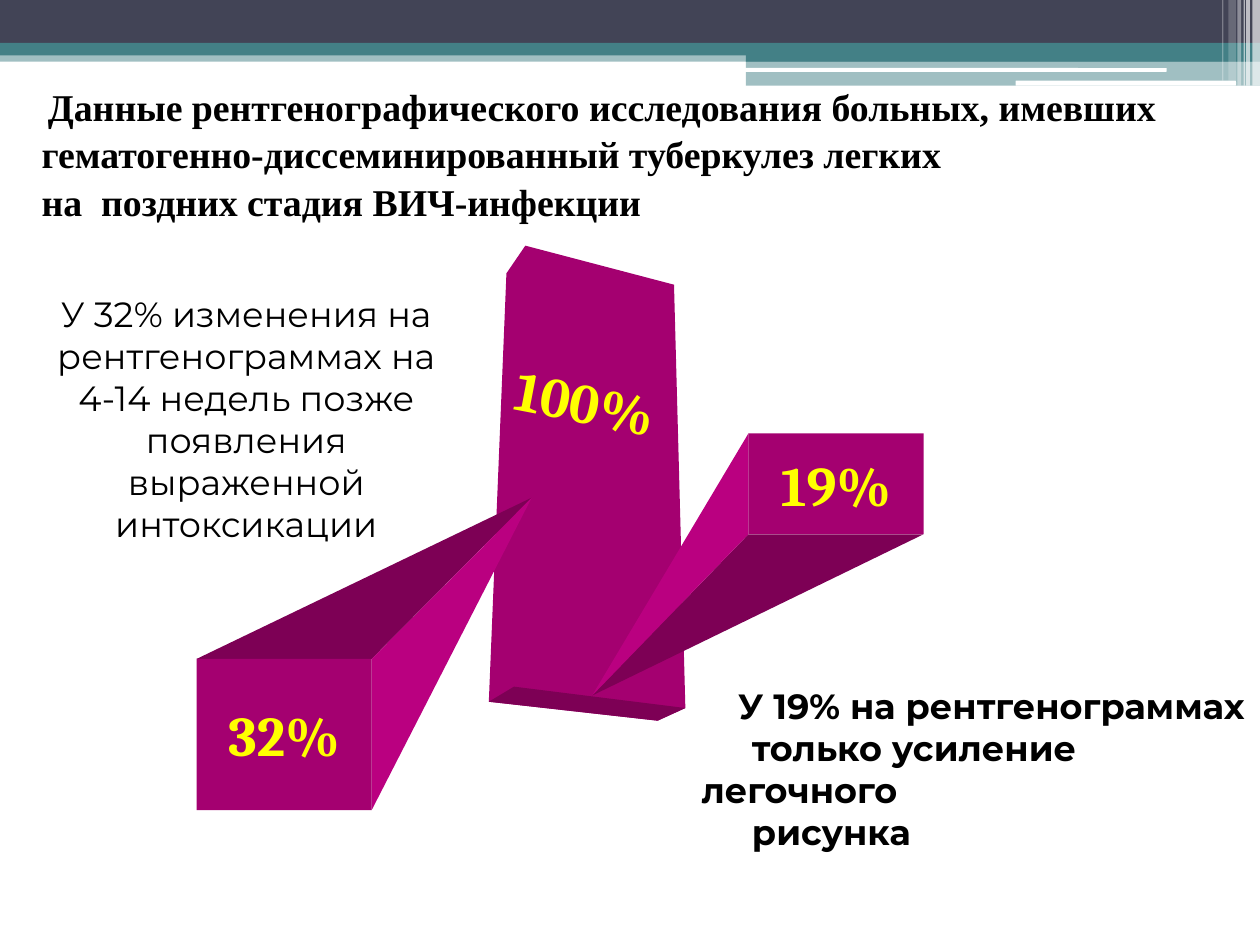
from lxml import etree
from pptx import Presentation
from pptx.dml.color import RGBColor
from pptx.enum.shapes import MSO_SHAPE
from pptx.enum.text import MSO_ANCHOR, PP_ALIGN
from pptx.oxml.ns import qn
from pptx.util import Inches, Pt

RECTANGLE, ROUNDED = MSO_SHAPE.RECTANGLE, MSO_SHAPE.ROUNDED_RECTANGLE
TOP, MIDDLE = MSO_ANCHOR.TOP, MSO_ANCHOR.MIDDLE
LEFT, CENTER = PP_ALIGN.LEFT, PP_ALIGN.CENTER
TITLE_ONLY = 5

# The slide is a grid of 100 columns by 75 rows of square cells.
COLUMNS, ROWS = 100, 75
CELL = Inches(0.1)

NAVY, TEAL, WHITE, BLACK, YELLOW = "424456", "438086", "FFFFFF", "000000", "FFFF00"
FRONT, LIGHT, DARK = "A40070", "BA0080", "7D0055"

TITLE_FORMAT = {"name": "Times New Roman", "size": Pt(21.6), "bold": True}
LABEL_FORMAT = {"name": "Cambria", "size": Pt(32), "bold": True}
NOTE_FORMAT = {"name": "Montserrat", "size": Pt(20), "bold": False}
STRONG_NOTE_FORMAT = {**NOTE_FORMAT, "bold": True}

TITLE = ("Данные рентгенографического исследования больных, имевших "
         "гематогенно-диссеминированный туберкулез легких\v"
         "на  поздних стадия ВИЧ-инфекции")
LATE_CHANGES = ["У 32% изменения на", "рентгенограммах на", "4-14 недель позже",
                "появления", "выраженной", "интоксикации"]
PATTERN_ONLY = ["У 19% на рентгенограммах", "только усиление легочного", "рисунка"]

# Left, top, width, height, colour, opacity in percent
BANDS = [
    (0, 4, 100, 0.9, TEAL, 50),
    (0, 0, 100, 3.4, NAVY, 100),
    (0, 3.4, 100, 1, TEAL, 100),
    (59.2, 3.9, 40.8, 1, TEAL, 100),
    (59.2, 4.8, 40.8, 2, TEAL, 50),
]
PILLS = [(59.1, 5.4, 33.5, 0.3), (80.6, 6.4, 17.5, 0.4)]
# Left, width, height, opacity in percent
STRIPES = [(99.4, 0.6, 6.8, 65), (98.9, 0.3, 6.8, 65), (98.7, 0.1, 6.8, 60),
           (98.2, 0.3, 6.8, 40), (97.5, 0.6, 6.4, 20), (97, 0.1, 6.4, 30)]


def cells(*values):
    return [round(value * CELL) for value in values]


def color(hex_value):
    return RGBColor.from_string(hex_value)


def paint(shape, hex_value, opacity=100):
    shape.shadow.inherit = False
    shape.fill.solid()
    shape.fill.fore_color.rgb = color(hex_value)
    shape.line.fill.background()
    if opacity < 100:
        fill_color = shape.fill._xPr.find(qn("a:solidFill"))[0]
        etree.SubElement(fill_color, qn("a:alpha"), val=str(opacity * 1000))


def add_block(slide, box, hex_value, opacity=100, kind=RECTANGLE):
    shape = slide.shapes.add_shape(kind, *cells(*box))
    paint(shape, hex_value, opacity)
    return shape


def add_face(slide, points, hex_value):
    start, *others = [cells(*point) for point in points]
    builder = slide.shapes.build_freeform(*start)
    builder.add_line_segments(others)
    paint(builder.convert_to_shape(), hex_value)


def write(shape, lines, text_format, hex_value, align=CENTER, anchor=MIDDLE,
          wrap=False, indents=(), spacing=1.0):
    frame = shape.text_frame
    frame.word_wrap = wrap
    frame.vertical_anchor = anchor
    for index, line in enumerate(lines):
        paragraph = frame.paragraphs[0] if index == 0 else frame.add_paragraph()
        paragraph.text = line
        paragraph.alignment = align
        paragraph.line_spacing = spacing
        if indents:
            properties = paragraph._p.get_or_add_pPr()
            properties.set("marL", "0")
            properties.set("indent", str(cells(indents[index])[0]))
        for run in paragraph.runs:
            for name, value in text_format.items():
                setattr(run.font, name, value)
            run.font.color.rgb = color(hex_value)


def add_text(slide, box, lines, text_format, hex_value, **layout):
    text_box = slide.shapes.add_textbox(*cells(*box))
    write(text_box, lines, text_format, hex_value, **layout)
    return text_box


def add_bar(slide, box, vanishing, dark_edge, light_edge, label):
    """Draw a front face and two sides that run to a vanishing point.

    An edge is a pair of corner numbers, clockwise from the top left.
    """
    left, top, width, height = box
    right, bottom = left + width, top + height
    corners = [(left, top), (right, top), (right, bottom), (left, bottom)]
    for edge, shade in ((dark_edge, DARK), (light_edge, LIGHT)):
        add_face(slide, [corners[number] for number in edge] + [vanishing], shade)
    write(add_block(slide, box, FRONT), [label], LABEL_FORMAT, YELLOW)


def add_column(slide):
    left, back, right, front = (38.8, 55.7), (40.8, 54.5), (54.4, 56.2), (52.2, 57.2)
    add_face(slide, [(40.2, 21.7), (41.7, 19.5), (53.5, 22.6), right, front, left], FRONT)
    add_face(slide, [left, back, right, front], DARK)


def add_header(slide):
    for *box, shade, opacity in BANDS:
        add_block(slide, box, shade, opacity)
    for box in PILLS:
        add_block(slide, box, WHITE, kind=ROUNDED)
    for left, width, height, opacity in STRIPES:
        add_block(slide, (left, 0, width, height), WHITE, opacity)


def add_title(slide):
    title = slide.shapes.title
    box = cells(2.3, 6.2, 93.7, 11.8)
    for name, value in zip(("left", "top", "width", "height"), box):
        setattr(title, name, value)
    write(title, [TITLE], TITLE_FORMAT, BLACK, align=LEFT, wrap=True,
          indents=[0.5], spacing=1.05)


def main():
    presentation = Presentation()
    presentation.slide_width, presentation.slide_height = cells(COLUMNS, ROWS)
    slide = presentation.slides.add_slide(presentation.slide_layouts[TITLE_ONLY])

    add_header(slide)
    add_title(slide)
    add_column(slide)
    add_bar(slide, (59.4, 34.4, 13.9, 8), (47, 55.2), (3, 2), (0, 3), "19%")
    add_bar(slide, (15.6, 52.3, 13.9, 12), (42.2, 39.5), (0, 1), (1, 2), "32%")

    column_label = add_text(slide, (39.2, 28.7, 14.5, 6.4), ["100%"],
                            LABEL_FORMAT, YELLOW, anchor=TOP)
    column_label.rotation = 11
    add_text(slide, (2.3, 22.7, 34.5, 21), LATE_CHANGES, NOTE_FORMAT, BLACK, anchor=TOP)
    add_text(slide, (54.7, 53.8, 45.3, 14.3), PATTERN_ONLY, STRONG_NOTE_FORMAT, BLACK,
             align=LEFT, anchor=TOP, wrap=True, indents=[2.9, 4, 4])

    presentation.save("out.pptx")


if __name__ == "__main__":
    main()
